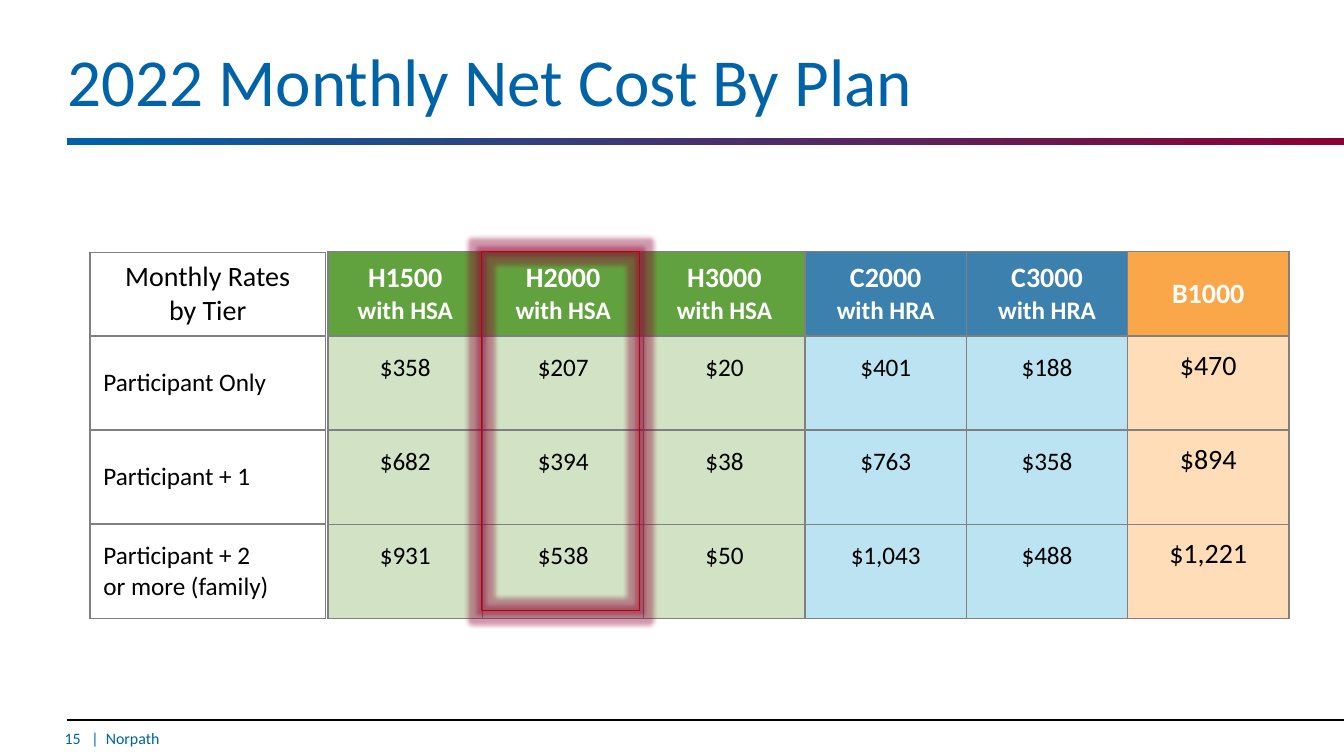
import pptx
import pptx.util
import pptx.dml.color
import pptx.enum.shapes
import pptx.enum.text
import pptx.oxml
from pptx.util import Inches

NS = 'xmlns:a="http://schemas.openxmlformats.org/drawingml/2006/main"'
LEFT = pptx.enum.text.PP_ALIGN.LEFT
CENTER = pptx.enum.text.PP_ALIGN.CENTER


def rgb(value):
    return pptx.dml.color.RGBColor.from_string(value)


def fill_cell(cell, text, sizes, color, fill, align=CENTER, bold=False, bottom=0.04):
    cell.text = text
    cell.vertical_anchor = pptx.enum.text.MSO_ANCHOR.MIDDLE
    cell.margin_top, cell.margin_bottom = Inches(0.04), Inches(bottom)
    cell.fill.solid()
    cell.fill.fore_color.rgb = rgb(fill)
    paragraphs = cell.text_frame.paragraphs
    for paragraph in paragraphs:
        paragraph.alignment = align
        paragraph.font.name = "Calibri"
        paragraph.font.size = pptx.util.Pt(sizes[0])
        paragraph.font.bold = bold
        paragraph.font.color.rgb = rgb(color)
    # Each line has its own size
    runs = [run for paragraph in paragraphs for run in paragraph.runs]
    for run, size in zip(runs, sizes):
        run.font.size = pptx.util.Pt(size)
    properties = cell._tc.get_or_add_tcPr()
    for index, side in enumerate("LRTB"):
        properties.insert(index, pptx.oxml.parse_xml(
            f'<a:ln{side} {NS} w="9525"><a:solidFill><a:srgbClr val="808080"/>'
            f'</a:solidFill></a:ln{side}>'))


deck = pptx.Presentation()
deck.slide_width, deck.slide_height = Inches(10), Inches(10) * 9 // 16
slide = deck.slides.add_slide(deck.slide_layouts[5])
shapes = slide.shapes

# Footer text
footer = shapes.add_textbox(Inches(0.48), Inches(5.37), Inches(2.58), Inches(0.24))
footer.text_frame.word_wrap = True
footer.text_frame.margin_left = footer.text_frame.margin_right = 0
footer_line = footer.text_frame.paragraphs[0]
footer_line.text = "15   |  Norpath"
footer_line.font.name = "Calibri"
footer_line.font.size = pptx.util.Pt(8.5)
footer_line.font.color.rgb = rgb("0063A8")

# Gradient bar under the title
bar = shapes.add_shape(pptx.enum.shapes.MSO_SHAPE.RECTANGLE,
                       Inches(0.5), Inches(1.03), Inches(9.5), Inches(0.05))
bar.shadow.inherit = False
bar.line.fill.background()
bar.fill.gradient()
bar.fill.gradient_angle = 180
for stop, color in zip(bar.fill.gradient_stops, ("8D0034", "0063A8")):
    stop.color.rgb = rgb(color)

# Footer rule
rule = shapes.add_connector(pptx.enum.shapes.MSO_CONNECTOR.STRAIGHT,
                            Inches(0.5), Inches(5.36), Inches(10), Inches(5.36))
rule.line.color.rgb = rgb("000000")
rule.line.width = pptx.util.Pt(1)
rule._element.spPr.append(pptx.oxml.parse_xml(f"<a:effectLst {NS}/>"))

# Title
title = shapes.title
title.left, title.top = Inches(0.5), Inches(0.3)
title.width, title.height = Inches(9.11), Inches(0.86)
title.text_frame.margin_left = 0
title.text_frame.vertical_anchor = pptx.enum.text.MSO_ANCHOR.TOP
title.text_frame.auto_size = pptx.enum.text.MSO_AUTO_SIZE.NONE
heading = title.text_frame.paragraphs[0]
heading.text = "2022 Monthly Net Cost By Plan"
heading.alignment = LEFT
heading.line_spacing = pptx.util.Pt(39)
heading.font.name = "Calibri"
heading.font.size = pptx.util.Pt(36)
heading.font.color.rgb = rgb("0063A8")

# Plan costs: header, header and body fill, body size, costs by tier
GREEN, BLUE, ORANGE = ("62A23E", "D2E2C4"), ("3C80AE", "BCE3F2"), ("FAA74A", "FEDDB8")
plans = [
    ("H1500\nwith HSA", GREEN, 13.5, ["$358", "$682", "$931"]),
    ("H2000\vwith HSA", GREEN, 13.5, ["$207", "$394", "$538"]),
    ("H3000\vwith HSA", GREEN, 13.5, ["$20", "$38", "$50"]),
    ("C2000\vwith HRA", BLUE, 13.5, ["$401", "$763", "$1,043"]),
    ("C3000\vwith HRA", BLUE, 13.5, ["$188", "$358", "$488"]),
    ("B1000", ORANGE, 15, ["$470", "$894", "$1,221"]),
]
costs = shapes.add_table(4, len(plans), Inches(2.44), Inches(1.87),
                         Inches(7.15), Inches(2.73)).table
for column, (plan, (dark, light), size, amounts) in enumerate(plans):
    costs.columns[column].width = Inches(1.2 if column else 1.15)
    fill_cell(costs.cell(0, column), plan, (15, 13.5), "FFFFFF", dark, bold=True)
    # The amounts sit above the middle, one line of text kept free below
    for row, amount in enumerate(amounts, 1):
        fill_cell(costs.cell(row, column), amount, [size], "000000", light,
                  bottom=0.04 + size * 1.2 / 72)

# Tier labels
tiers = ["Monthly Rates\vby Tier", "Participant Only", "Participant + 1",
         "Participant + 2\vor more (family)"]
labels = shapes.add_table(4, 1, Inches(0.67), Inches(1.88),
                          Inches(1.75), Inches(2.73)).table
for row, tier in enumerate(tiers):
    size, align = (13.5, LEFT) if row else (15, CENTER)
    fill_cell(labels.cell(row, 0), tier, (size, size), "000000", "FFFFFF", align)
for table, header_height in ((costs, 0.63), (labels, 0.62)):
    for row, tier_row in enumerate(table.rows):
        tier_row.height = Inches(0.7 if row else header_height)

# Glowing frame around the H2000 plan
highlight = shapes.add_shape(pptx.enum.shapes.MSO_SHAPE.RECTANGLE,
                             Inches(3.58), Inches(1.87), Inches(1.18), Inches(2.67))
highlight.fill.background()
highlight.line.color.rgb = rgb("C00000")
highlight.line.width = pptx.util.Pt(0.5)
highlight._element.spPr.append(pptx.oxml.parse_xml(
    f'<a:effectLst {NS}><a:glow rad="63500"><a:srgbClr val="8D0034">'
    '<a:alpha val="40000"/></a:srgbClr></a:glow></a:effectLst>'))

deck.save("out.pptx")
